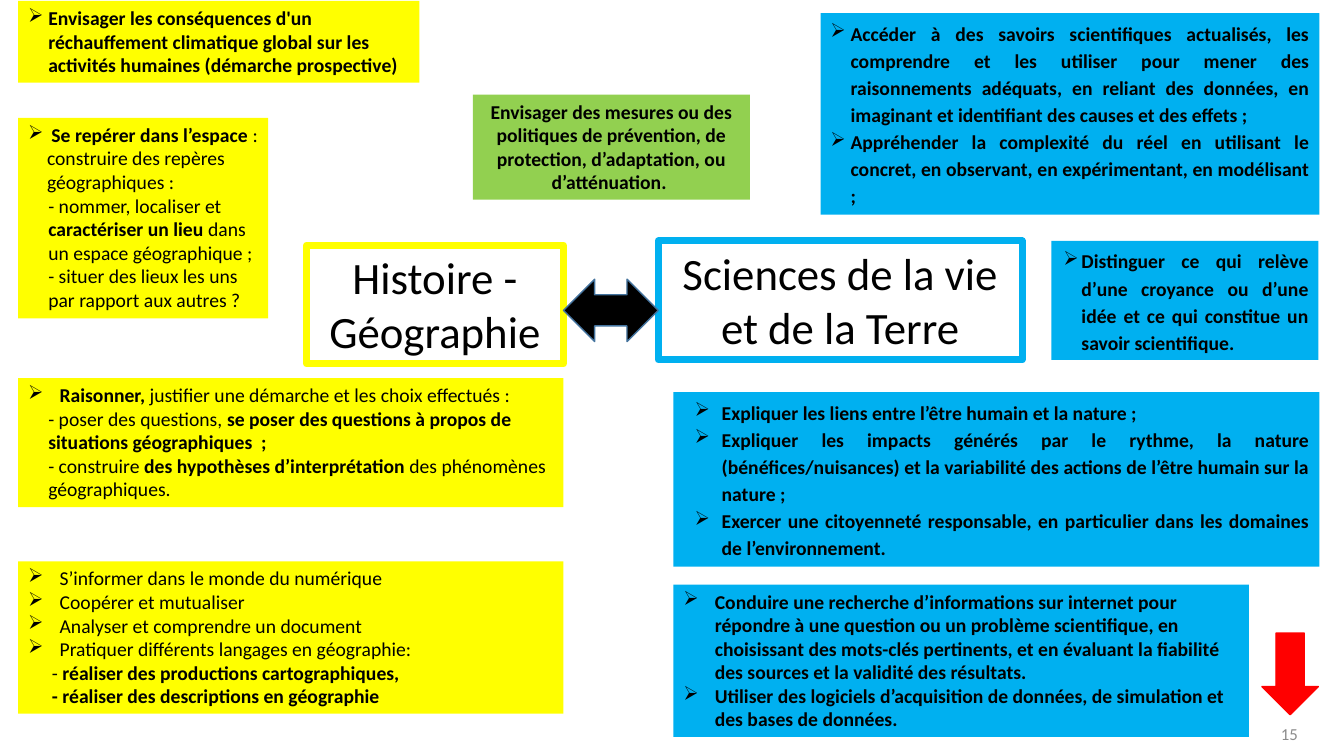
import pptx
import pptx.util
import pptx.dml.color
import pptx.enum.shapes
import pptx.enum.text
import lxml.etree

Pt = pptx.util.Pt
SHAPE = pptx.enum.shapes.MSO_SHAPE
ALIGN = pptx.enum.text.PP_ALIGN

COLOURS = {
    "history": "FFFF00", "science": "00B0F0", "shared": "92D050",
    "text": "000000", "link": "000000", "link_edge": "43739E",
    "down": "FF0000", "number": "8C8C8C",
}

TITLES = [
    ("Histoire - Géographie", "history", (218.9, 175, 183.6, 85)),
    ("Sciences de la vie et de la Terre", "science", (470.2, 172.1, 259.9, 85)),
]

MEASURES = ("**Envisager des mesures ou des politiques de prévention, de protection, "
            "d’adaptation, ou d’atténuation. **")

HISTORY_CARDS = [
    ((13, 0.7, 286.6, 58.3), (14.4, -14.4), 14.4, [
        "➢**Envisager les conséquences d'un réchauffement climatique global sur les "
        "activités humaines (démarche prospective)**",
    ]),
    ((13, 84.2, 178.6, 143.3), (13.5, -13.5), 14.4, [
        "➢** Se repérer dans l’espace **: construire des repères géographiques :",
        "- nommer, localiser et **caractériser un lieu** dans un espace géographique ;",
        "- situer des lieux les uns par rapport aux autres ?",
    ]),
    ((13, 270, 389.5, 92.2), (22.5, -22.5), 14.4, [
        "➢**Raisonner,** justifier une démarche et les choix effectués :",
        "- poser des questions, **se poser des questions à propos de situations "
        "géographiques  ;**",
        "- construire **des hypothèses d’interprétation **des phénomènes géographiques.",
    ]),
    ((13, 401, 389.5, 108.7), (22.5, -22.5), 17, [
        "➢S’informer dans le monde du numérique",
        "➢Coopérer et mutualiser",
        "➢Analyser et comprendre un document",
        "➢Pratiquer différents langages en géographie:",
        "- **réaliser des productions cartographiques,**",
        "**- réaliser des descriptions en géographie**",
    ]),
]

SCIENCE_CARDS = [
    ((481, 280.1, 461.5, 124.6), (27.4, -19.4), True, [
        "➢**Expliquer les liens entre l’être humain et la nature ;**",
        "➢**Expliquer les impacts générés par le rythme, la nature (bénéfices/nuisances) "
        "et la variabilité des actions de l’être humain sur la nature ; **",
        "➢**Exercer une citoyenneté responsable, en particulier dans les domaines de "
        "l’environnement.**",
    ]),
    ((586.1, 9.4, 356.4, 144), (14.4, -14.4), True, [
        "➢**Accéder à des savoirs scientifiques actualisés, les comprendre et les utiliser "
        "pour mener des raisonnements adéquats, en reliant des données, en imaginant et "
        "identifiant des causes et des effets ;**",
        "➢**Appréhender la complexité du réel en utilisant le concret, en observant, en "
        "expérimentant, en modélisant ;**",
    ]),
    ((751, 172.1, 190.8, 85), (14.4, -13), True, [
        "➢**Distinguer ce qui relève d’une croyance ou d’une idée et ce qui constitue un "
        "savoir scientifique.**",
    ]),
    ((481, 417.6, 411.1, 108.7), (22.5, -22.5), False, [
        "➢**Conduire une recherche d’informations sur internet pour répondre à une question "
        "ou un problème scientifique, en choisissant des mots-clés pertinents, et en évaluant "
        "la fiabilité des sources et la validité des résultats.**",
        "➢**Utiliser des logiciels d’acquisition de données, de simulation et des bases de "
        "données.**",
    ]),
]

ARROWS = [
    (SHAPE.LEFT_RIGHT_ARROW, (402.5, 199.4, 67.7, 44.6), "link", "link_edge"),
    (SHAPE.DOWN_ARROW, (901.4, 452.2, 40.3, 58.3), "down", "down"),
]

PAGE_NUMBER = ("15", (907.9, 513.4, 26.6, 21.6))


def colour(name):
    return pptx.dml.color.RGBColor.from_string(COLOURS[name])


def add_bullet(para, char):
    bullet = lxml.etree.SubElement(
        para._p.get_or_add_pPr(), pptx.oxml.ns.qn("a:buChar"))
    bullet.set("char", char)


def add_text(page, place, lines, size=14, ink="text", fill=None, edge=None,
             align=None, spacing=None, hanging=(0, 0), margin=0, wrap=True):
    box = page.shapes.add_textbox(*map(Pt, place))
    if fill:
        box.fill.solid()
        box.fill.fore_color.rgb = colour(fill)
    if edge:
        box.line.color.rgb = colour(edge)
        box.line.width = Pt(5)
    frame = box.text_frame
    frame.word_wrap = wrap
    frame.auto_size = pptx.enum.text.MSO_AUTO_SIZE.SHAPE_TO_FIT_TEXT
    for index, line in enumerate(lines):
        para = frame.add_paragraph() if index else frame.paragraphs[0]
        para.alignment = align
        para.line_spacing = spacing
        bulleted = line.startswith("➢")
        left, first = hanging if bulleted else (margin, 0)
        properties = para._p.get_or_add_pPr()
        properties.set("marL", str(int(Pt(left))))
        properties.set("indent", str(int(Pt(first))))
        if bulleted:
            add_bullet(para, "➢")
        for part, words in enumerate(line.removeprefix("➢").split("**")):
            if words:
                span = para.add_run()
                span.text = words
                span.font.name = "Calibri"
                span.font.size = Pt(size)
                span.font.bold = part % 2 == 1
                span.font.color.rgb = colour(ink)


def add_arrow(page, kind, place, fill, edge):
    arrow = page.shapes.add_shape(kind, *map(Pt, place))
    arrow.shadow.inherit = False
    arrow.fill.solid()
    arrow.fill.fore_color.rgb = colour(fill)
    arrow.line.color.rgb = colour(edge)
    arrow.line.width = Pt(1)


def main():
    deck = pptx.Presentation()
    deck.slide_width, deck.slide_height = Pt(960), Pt(540)
    page = deck.slides.add_slide(deck.slide_layouts[6])
    for title, edge, place in TITLES:
        add_text(page, place, [title], size=32, edge=edge, align=ALIGN.CENTER)
    for arrow in ARROWS:
        add_arrow(page, *arrow)
    add_text(page, (337.7, 67.7, 198, 74.9), [MEASURES], fill="shared",
             align=ALIGN.CENTER)
    for place, hanging, margin, lines in HISTORY_CARDS:
        add_text(page, place, lines, fill="history", hanging=hanging, margin=margin)
    for place, hanging, justified, lines in SCIENCE_CARDS:
        add_text(page, place, lines, fill="science", hanging=hanging,
                 align=ALIGN.JUSTIFY if justified else None,
                 spacing=1.15 if justified else None)
    number, place = PAGE_NUMBER
    add_text(page, place, [number], size=12, ink="number", wrap=False)
    deck.save("out.pptx")


if __name__ == "__main__":
    main()
